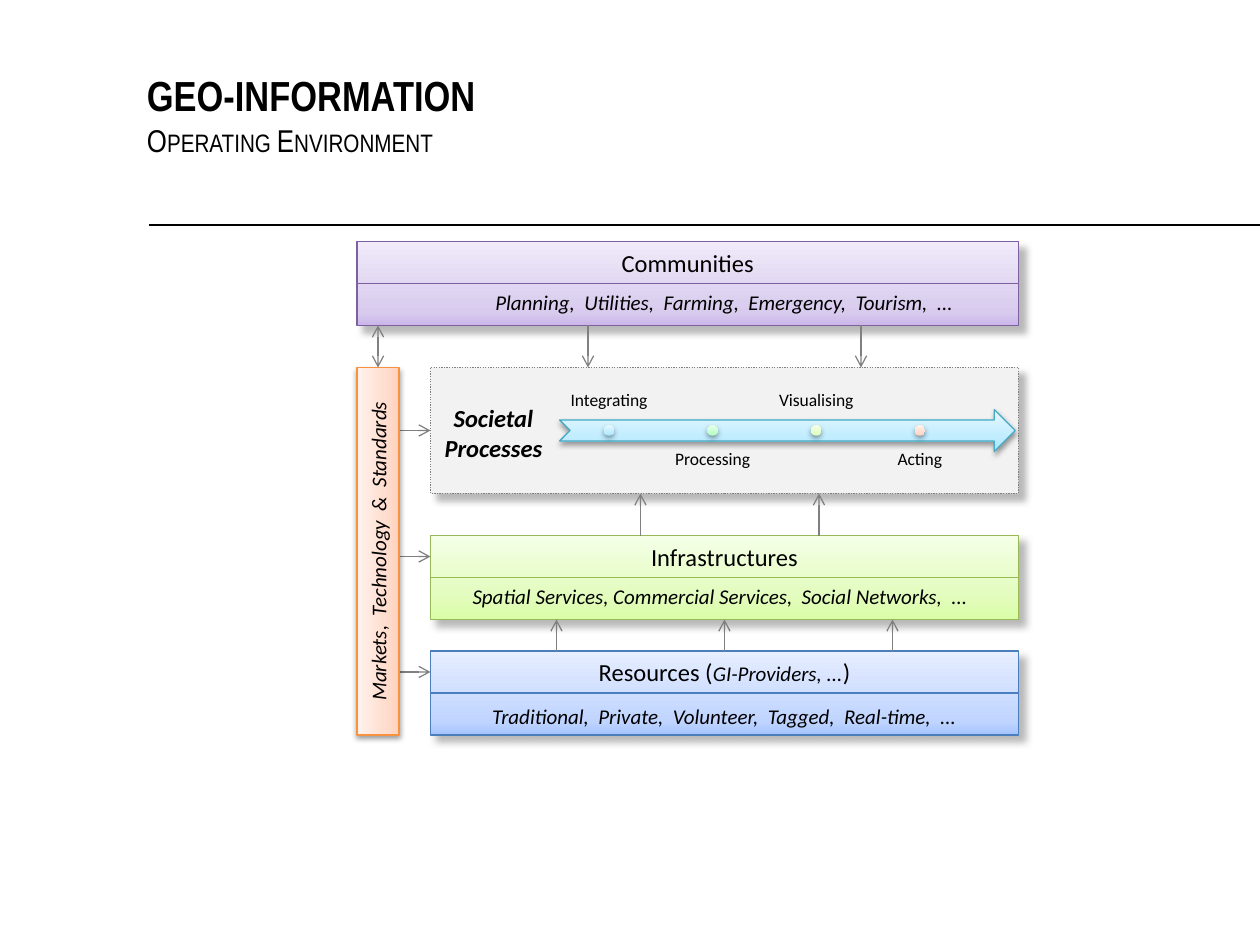
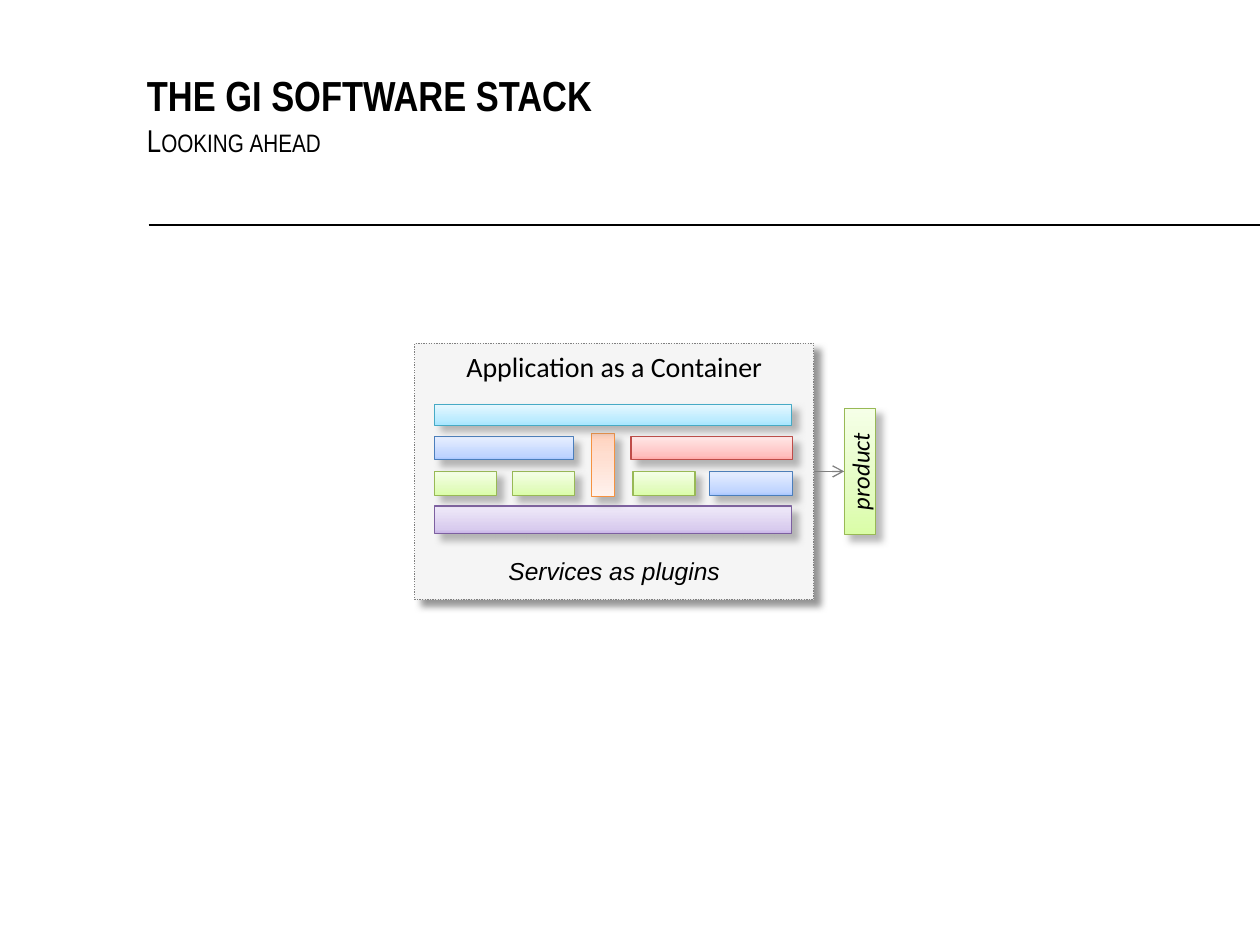
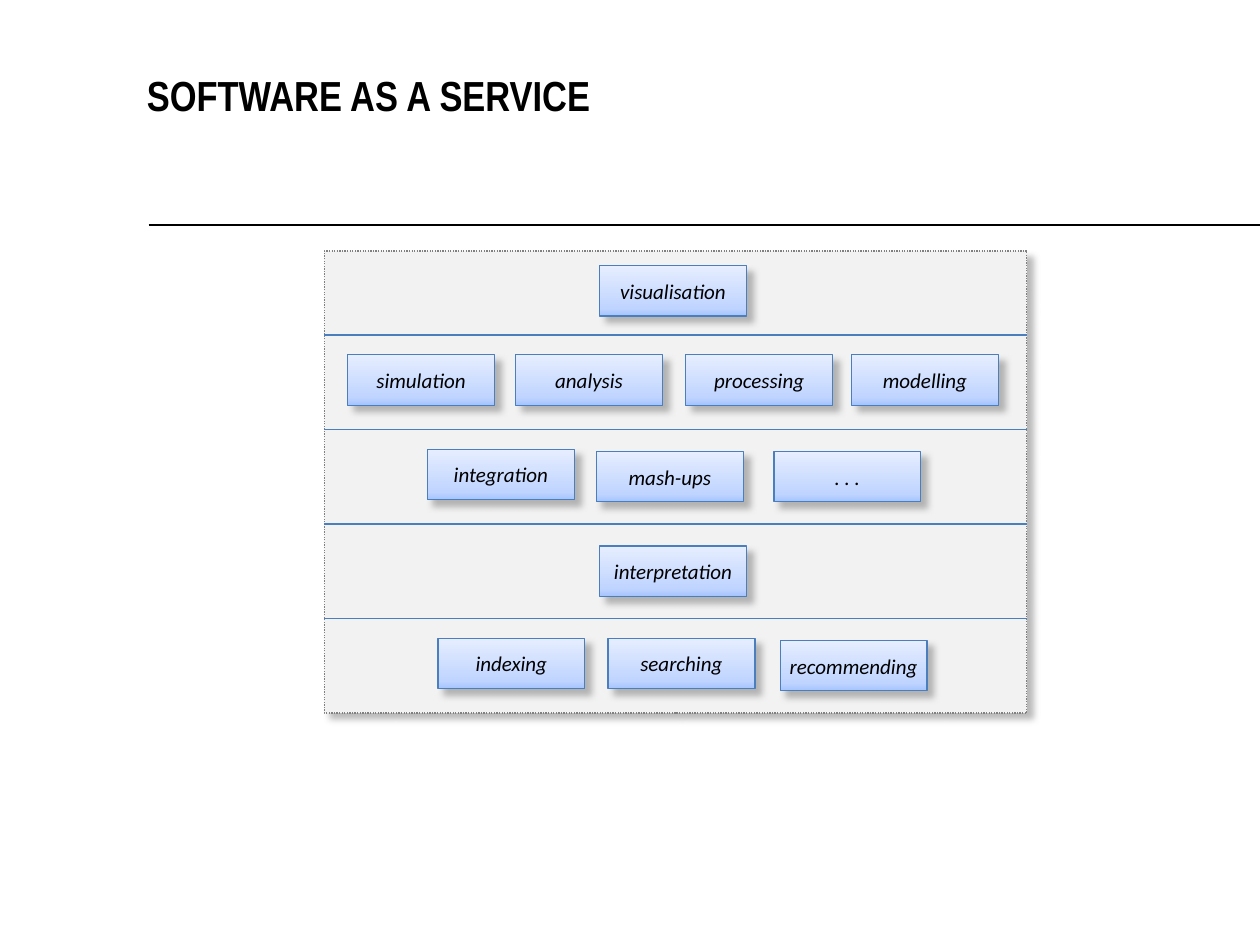
from lxml.etree import SubElement as Sub
from pptx import Presentation
from pptx.dml.color import RGBColor as RGB
from pptx.enum.dml import MSO_LINE as Dash
from pptx.enum.shapes import MSO_CONNECTOR as Link, MSO_SHAPE as Form
from pptx.enum.text import MSO_ANCHOR as Anchor, PP_ALIGN as Align
from pptx.oxml.ns import qn
from pptx.util import Inches, Pt

WIDE, HIGH = 10, 7.5
COLS = 120
CELL = WIDE / COLS

INK = {"black": "000000", "white": "FFFFFF", "pale": "F2F2F2",
       "gray": "808080", "dark": "404040"}
HUES = {
    "sky": ["A7E6FF", "C1EDFF", "E7F8FF", "46AAC5"],
    "mint": ["AFFFBD", "C6FFD0", "E9FFED", "46AAC5"],
    "lime": ["DBFFB6", "E5FFCB", "F5FFEB", "98B955"],
    "peach": ["FFD2BD", "FFDED0", "FFF2ED", "F69240"],
    "green": ["DAFDA7", "E4FCC2", "F5FFE7", "98B955"],
    "blue": ["A4C4FF", "BFD4FF", "E6EEFF", "4B7EBC"],
    "violet": ["C9B5E8", "D8CBEE", "F0EAF9", "7D60A0"],
    "red": ["FFA6A5", "FFC0BF", "FFE7E7", "BF4C48"],
}
MIDS = {"blue": 15, "violet": 15, "red": 20}
SIDE = ("gray", 55, 4, 5, 45)
DEEP = ("dark", 55, 4, 5, 45)
DROP = ("black", 38, 3.1, 1.6, 90)
TOP, LEFT, BASE, RIGHT = range(4)


def cells(n):
    return Inches(n * CELL)


def place(box):
    return [cells(n) for n in box]


def shift(box, x, y, w, h):
    return box[0] + x, box[1] + y, w, h


def paint(line, tone, width=0.75):
    line.color.rgb = RGB.from_string(tone)
    line.width = Pt(width)


def shade(shape, cast):
    shape.shadow.inherit = False
    if cast:
        tone, alpha, blur, dist, turn = cast
        glow = Sub(shape._element.spPr.find(qn("a:effectLst")), qn("a:outerShdw"),
                   blurRad=str(Pt(blur)), dist=str(Pt(dist)),
                   dir=str(turn * 60000), algn="tl", rotWithShape="0")
        hue = Sub(glow, qn("a:srgbClr"), val=INK[tone])
        Sub(hue, qn("a:alpha"), val=str(alpha * 1000))


def blend(shape, hue):
    shape.fill.gradient()
    shape.fill.gradient_angle = 90
    stops = shape._element.spPr.find(qn("a:gradFill")).find(qn("a:gsLst"))
    for old in list(stops):
        stops.remove(old)
    for pos, tone in zip((0, MIDS.get(hue, 35), 100), HUES[hue]):
        stop = Sub(stops, qn("a:gs"), pos=str(pos * 1000))
        Sub(stop, qn("a:srgbClr"), val=tone)


def write(shape, text, size, font="Calibri", bold=False, slant=False,
          align=Align.CENTER, anchor=Anchor.TOP, inset=None, wrap=True, space=None):
    frame = shape.text_frame
    frame.word_wrap = wrap
    frame.vertical_anchor = anchor
    if inset is not None:
        frame.margin_left = frame.margin_right = Inches(inset)
        frame.margin_top = frame.margin_bottom = Inches(inset)
    for i, words in enumerate(text.split("\n")):
        para = frame.add_paragraph() if i else frame.paragraphs[0]
        para.text = words
        para.alignment = align
        if space:
            para.line_spacing = space
        face = para.font
        face.name, face.size, face.bold, face.italic = font, Pt(size), bold, slant
        face.color.rgb = RGB.from_string(INK["black"])
    return frame.paragraphs[0]


def label(slide, box, text, size, **style):
    return write(slide.shapes.add_textbox(*place(box)), text, size, **style)


def block(slide, box, hue, form=Form.RECTANGLE, cast=SIDE, edge=True):
    shape = slide.shapes.add_shape(form, *place(box))
    blend(shape, hue)
    if edge:
        paint(shape.line, HUES[hue][3])
    else:
        shape.line.fill.background()
    shade(shape, cast)
    return shape


def panel(slide, box, tone="pale", cast=SIDE, alpha=None):
    shape = slide.shapes.add_shape(Form.RECTANGLE, *place(box))
    shape.fill.solid()
    shape.fill.fore_color.rgb = RGB.from_string(INK[tone])
    if alpha:
        hue = next(shape._element.spPr.iter(qn("a:srgbClr")))
        Sub(hue, qn("a:alpha"), val=str(alpha * 1000))
    paint(shape.line, INK["gray"])
    shape.line.dash_style = Dash.ROUND_DOT
    shade(shape, cast)
    return shape


def rule(slide, x1, y1, x2, y2, tone, width=0.75, ends=()):
    line = slide.shapes.add_connector(Link.STRAIGHT, *place((x1, y1, x2, y2)))
    paint(line.line, tone, width)
    for end in ends:
        Sub(line.line._get_or_add_ln(), qn(f"a:{end}End"), type="arrow")
    Sub(line._element.spPr, qn("a:effectLst"))
    return line


def arrow(slide, x1, y1, x2, y2, ends=("tail",)):
    return rule(slide, x1, y1, x2, y2, INK["gray"], ends=ends)


def head(deck, title, sub=None):
    slide = deck.slides.add_slide(deck.slide_layouts[6])
    rule(slide, 14.15, 21.45, COLS, 21.45, INK["black"], 1)
    style = dict(font="Arial Narrow", align=Align.LEFT, inset=0)
    label(slide, (14, 4, 102, 7.4), title, 24, bold=True, anchor=Anchor.BOTTOM, **style)
    if sub:
        para = label(slide, (14, 11, 102, 3), sub, 18, space=Pt(25), **style)
        para._p.pPr.find(qn("a:defRPr")).set("cap", "small")
    return slide


def tier(slide, box, hue, name, items, mid, drop=4.0):
    x, y, w, h = box
    shape = block(slide, box, hue)
    para = write(shape, name, 14)
    half = y + h / 2
    rule(slide, x, half, x + w, half, HUES[hue][3])
    label(slide, (mid - 28, y + drop, 56, 3.6), items, 12, slant=True, wrap=False)
    return shape, para


def flow(slide, box):
    x, y, w, h = box
    frame = panel(slide, box)
    mid = y + h / 2
    start, wide, step = x + 12.3, 9.4, 9.87
    block(slide, (start, mid - 2, 43.4, 4), "sky", Form.NOTCHED_RIGHT_ARROW, DROP)
    steps = [("Integrating", "sky"), ("Processing", "mint"),
             ("Visualising", "lime"), ("Acting", "peach")]
    for i, (name, hue) in enumerate(steps):
        left = start + i * step
        top, anchor = (mid + 1, Anchor.TOP) if i % 2 else (mid - 5, Anchor.BOTTOM)
        label(slide, (left, top, wide, 4), name, 10, anchor=anchor,
              inset=0.08, wrap=False, space=0.9)
        block(slide, (left + wide / 2 - 0.5, mid - 0.5, 1, 1), hue, Form.OVAL, DROP, False)
    label(slide, (x + 0.1, mid - 3.2, 11.8, 6.8), "Societal\nProcesses", 14,
          bold=True, slant=True, wrap=False)
    return frame


def pillar(slide, box, text):
    x, y, w, h = box
    shape = block(slide, (x + (w - h) / 2, y + (h - w) / 2, h, w), "peach", cast=DROP)
    shape.rotation = 270
    write(shape, text, 12, slant=True, anchor=Anchor.MIDDLE)


def setting(slide, box):
    x, y, w, h = box
    inner, wide = x + 7, w - 7
    mid = inner + wide / 2
    work = flow(slide, (inner, y + 12, wide, 12))
    infra, _ = tier(slide, (inner, y + 28, wide, 8), "green", "Infrastructures",
                    "Spatial Services, Commercial Services,  Social Networks,  ...", mid - 0.4)
    base, para = tier(slide, (inner, y + 39, wide, 8), "blue", "Resources (",
                      "Traditional,  Private,  Volunteer,  Tagged,  Real-time,  ...", mid, 4.4)
    for text, size, slant in (("GI-Providers, ...", 12, True), (")", 14, False)):
        run = para.add_run()
        run.text = text
        run.font.size, run.font.italic = Pt(size), slant
    tier(slide, (x, y, w, 8), "violet", "Communities",
         "Planning,  Utilities,  Farming,  Emergency,  Tourism,  ...", mid)
    for dx in (22, 48):
        arrow(slide, x + dx, y + 8, x + dx, y + 12)
    for dx in (27, 44):
        arrow(slide, x + dx, y + 28, x + dx, y + 24)
    rise = [arrow(slide, x + dx, y + 39, x + dx, y + 36) for dx in (19, 35, 51)]
    rise[1].begin_connect(base, TOP)
    rise[1].end_connect(infra, BASE)
    feed = [arrow(slide, x + 4, y + dy, inner, y + dy) for dy in (18, 30, 41)]
    feed[0].end_connect(work, LEFT)
    arrow(slide, x + 2, y + 12, x + 2, y + 8, ("head", "tail"))
    pillar(slide, (x, y + 12, 4, 35), "Markets,  Technology  &  Standards")


def stack(slide, box):
    x, y, w, h = box
    panel(slide, box, "white", DEEP)
    case = panel(slide, box, cast=None, alpha=70)
    write(case, "Application as a Container", 16)
    good = block(slide, (x + w + 2.9, y + h / 2 - 6, 3, 12), "green")
    good.text_frame._txBody.bodyPr.set("vert", "vert270")
    write(good, "product", 14, slant=True, anchor=Anchor.MIDDLE)
    parts = [("violet", 1.9, 15.5, 34, 2.6), ("green", 1.9, 12.2, 5.9, 2.3),
             ("green", 9.3, 12.2, 5.9, 2.3), ("blue", 1.9, 8.9, 13.2, 2.2),
             ("peach", 16.8, 8.6, 2.2, 6), ("blue", 28.1, 12.2, 7.9, 2.3),
             ("red", 20.6, 8.9, 15.4, 2.2), ("green", 20.8, 12.2, 5.9, 2.3),
             ("sky", 1.9, 5.8, 34, 2)]
    for hue, *part in parts:
        shape = block(slide, shift(box, *part), hue)
        if hue == "peach":
            shape.rotation = 180
    label(slide, shift(box, 0, 19.7, w, 4), "Services as plugins", 14,
          font="Arial", slant=True, wrap=False)
    out = arrow(slide, x + w, y + h / 2, x + w + 2.9, y + h / 2)
    out.begin_connect(case, RIGHT)
    out.end_connect(good, LEFT)


def shelves(slide, box):
    x, y, w, h = box
    panel(slide, box)
    tiles = [("visualisation", 26.2, 1.4),
             ("simulation", 2.2, 9.9), ("analysis", 18.2, 9.9),
             ("processing", 34.4, 9.9), ("modelling", 50.2, 9.9),
             ("integration", 9.8, 18.9), ("mash-ups", 25.9, 19.1), (". . .", 42.8, 19.1),
             ("interpretation", 26.2, 28.1),
             ("indexing", 10.8, 36.9), ("searching", 27, 36.9), ("recommending", 43.4, 37.1)]
    for name, dx, dy in tiles:
        tile = block(slide, shift(box, dx, dy, 14, 4.8), "blue")
        write(tile, name, 12, slant=True, anchor=Anchor.MIDDLE, inset=0.05, wrap=False)
    for i in range(4):
        row = y + 8 + 9 * i
        rule(slide, x, row, x + w, row, HUES["blue"][3])


def main():
    deck = Presentation()
    deck.slide_width, deck.slide_height = Inches(WIDE), Inches(HIGH)
    setting(head(deck, "GEO-INFORMATION", "Operating Environment"), (34, 23, 63, 47))
    stack(head(deck, "THE GI SOFTWARE STACK", "Looking ahead"), (39.5, 32.7, 38, 24.4))
    shelves(head(deck, "SOFTWARE AS A SERVICE"), (30.9, 23.9, 66.9, 44))
    deck.save("out.pptx")


if __name__ == "__main__":
    main()
